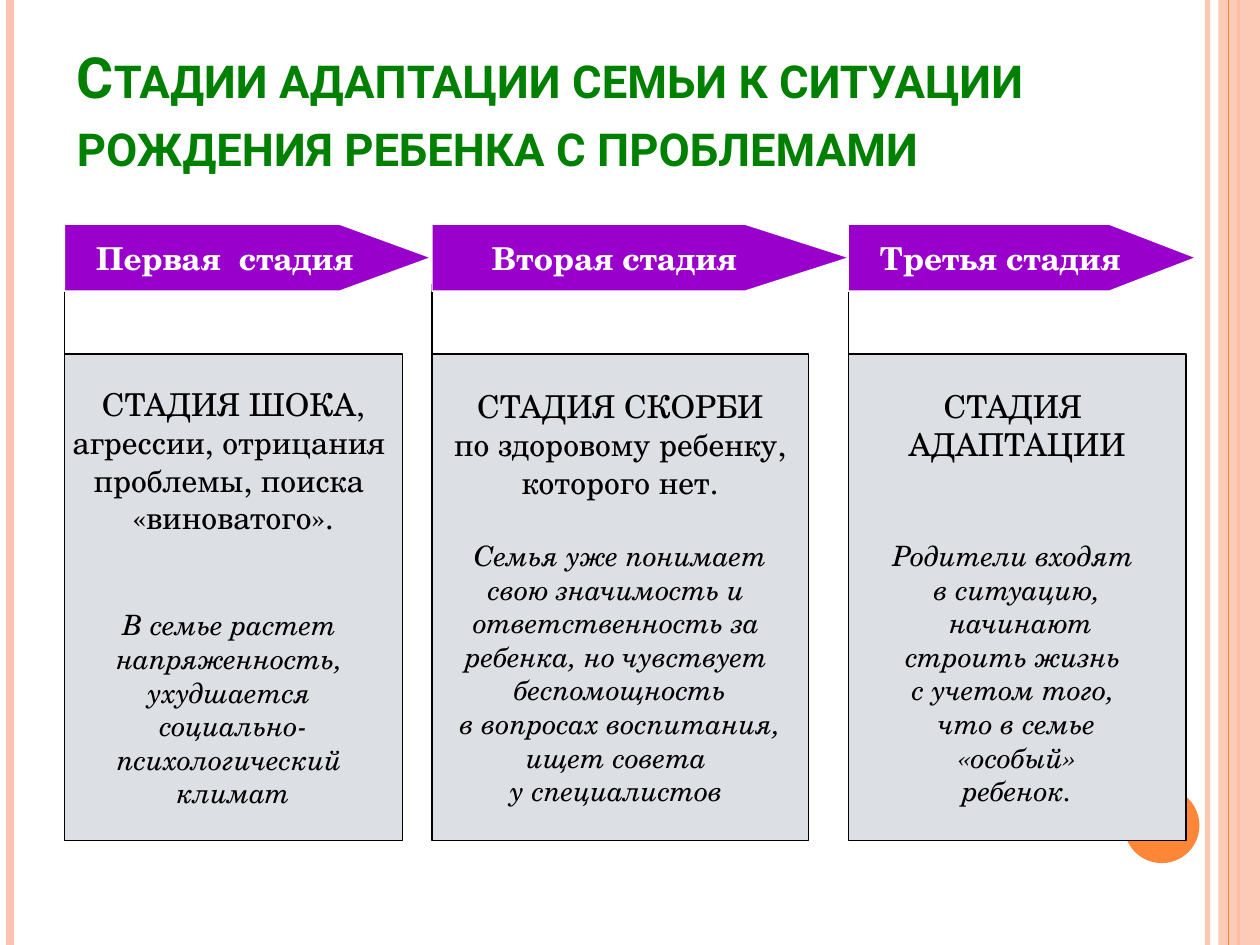
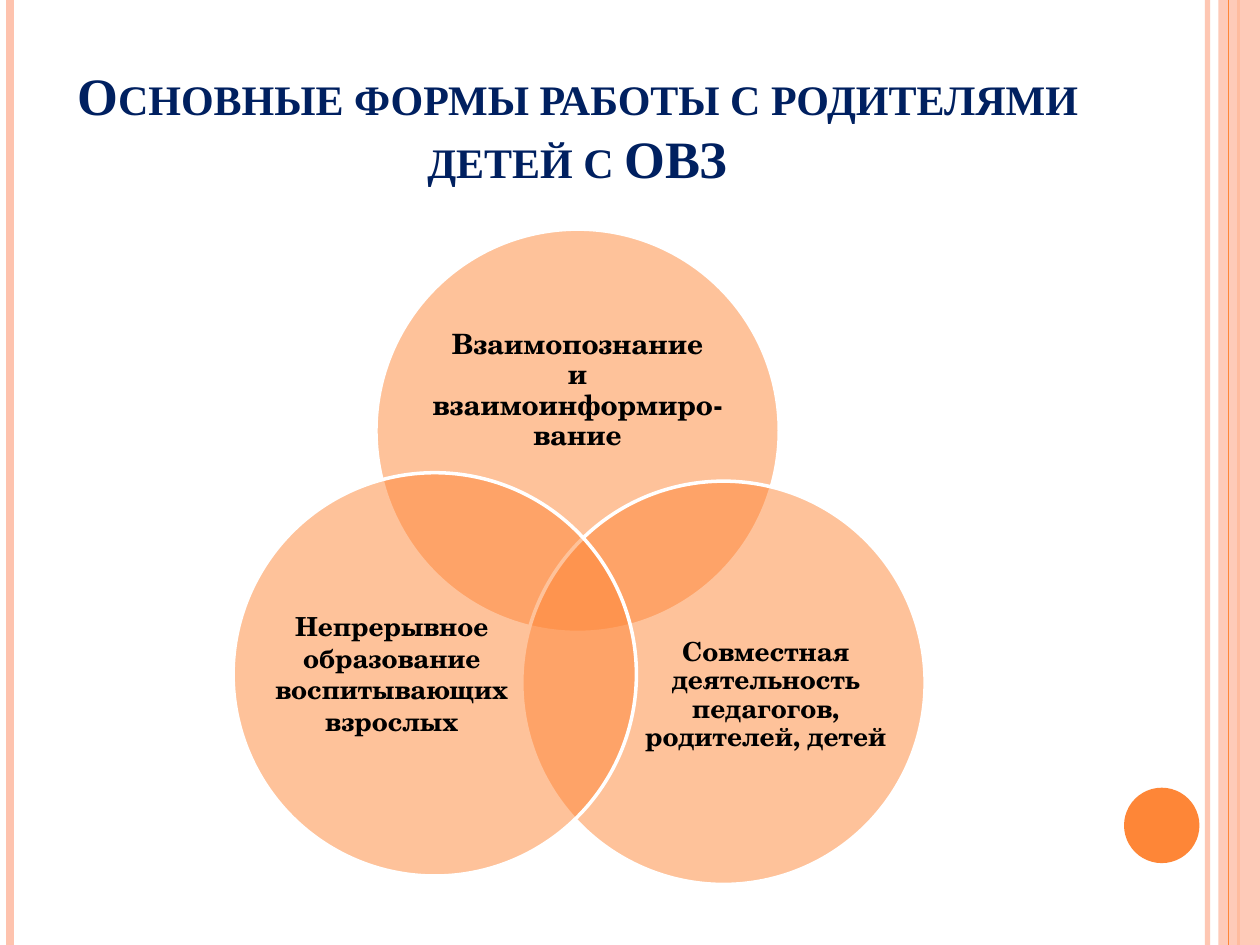
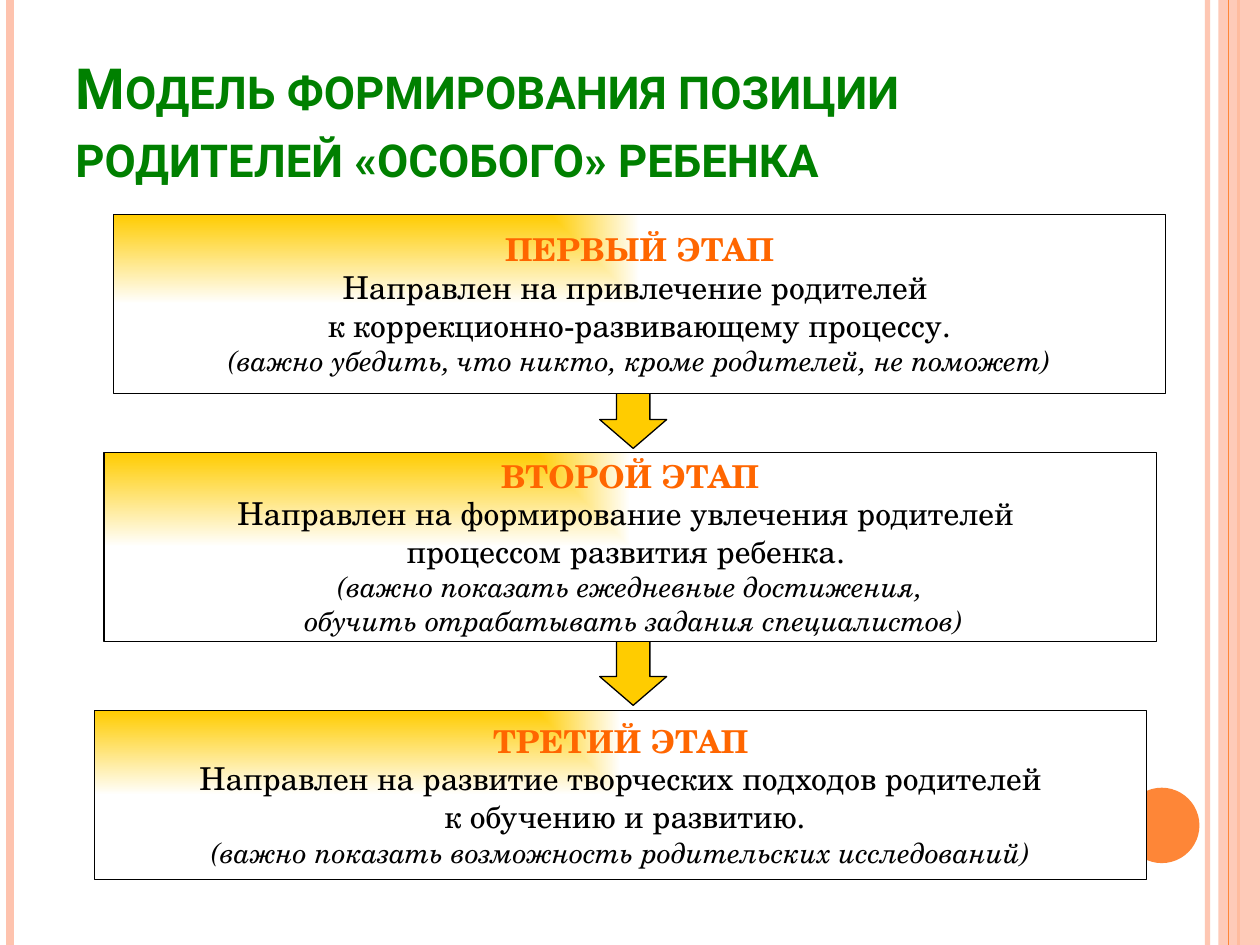
import dataclasses

import pptx
import pptx.dml.color
import pptx.enum.shapes
import pptx.enum.text
import pptx.oxml.ns
import pptx.oxml.xmlchemy
import pptx.util
from lxml import etree

Cm = pptx.util.Cm
Pt = pptx.util.Pt
RGBColor = pptx.dml.color.RGBColor
SHAPE = pptx.enum.shapes.MSO_SHAPE
ALIGN = pptx.enum.text.PP_ALIGN
ANCHOR = pptx.enum.text.MSO_ANCHOR
qn = pptx.oxml.ns.qn

WIDTH, HEIGHT = 25.4, 19.05

BLACK = RGBColor(0x00, 0x00, 0x00)
WHITE = RGBColor(0xFF, 0xFF, 0xFF)
PEACH = RGBColor(0xFE, 0xC3, 0xAE)
ORANGE = RGBColor(0xFE, 0x86, 0x37)
GREEN = RGBColor(0x00, 0x80, 0x00)
NAVY = RGBColor(0x00, 0x20, 0x60)
PURPLE = RGBColor(0x99, 0x00, 0xCC)
GREY = RGBColor(0xDC, 0xDF, 0xE3)
YELLOW = RGBColor(0xFF, 0xCC, 0x00)
HEADING = RGBColor(0xFF, 0x66, 0x00)


@dataclasses.dataclass
class Style:
    size: float
    color: RGBColor = BLACK
    bold: bool = False
    italic: bool = False
    font: str = "TeX Gyre Schola"
    small_caps: bool = False


GREEN_TITLE = Style(32.4, GREEN, bold=True, font="Roboto", small_caps=True)
NAVY_TITLE = Style(30, NAVY, bold=True, font="Times New Roman", small_caps=True)
BODY = Style(18)
NOTE = Style(16, italic=True)
PLATE = Style(18, WHITE, bold=True)
STEP = Style(18, HEADING, bold=True)


def set_opacity(shape, percent):
    """Apply to the first colour of the shape, so call it before a line is added to a fill."""
    color = next(shape._element.spPr.iter(qn("a:srgbClr")))
    etree.SubElement(color, qn("a:alpha")).set("val", str(percent * 1000))


def write(tf, blocks, align=ALIGN.CENTER):
    """Fill the frame with blocks of (lines, style, points of space above)."""
    p = None
    for lines, style, gap in blocks:
        for i, line in enumerate(lines):
            p = tf.add_paragraph() if p is not None else tf.paragraphs[0]
            p.text = line
            p.alignment = align
            if gap and i == 0:
                p.space_before = Pt(gap)
            for r in p.runs:
                r.font.name = style.font
                r.font.size = Pt(style.size)
                r.font.bold = style.bold
                r.font.italic = style.italic
                r.font.color.rgb = style.color
                if style.small_caps:
                    r._r.get_or_add_rPr().set("cap", "small")


def add_shape(s, kind, x, y, w, h, fill, line=None, line_width=0.75, opacity=None):
    sp = s.shapes.add_shape(kind, Cm(x), Cm(y), Cm(w), Cm(h))
    sp.shadow.inherit = False
    sp.fill.solid()
    sp.fill.fore_color.rgb = fill
    if opacity:
        set_opacity(sp, opacity)
    if line is None:
        sp.line.fill.background()
    else:
        sp.line.color.rgb = line
        sp.line.width = Pt(line_width)
    return sp


def add_label(sp, blocks):
    """Put unwrapped, centred text into a shape."""
    sp.text_frame.word_wrap = False
    sp.text_frame.vertical_anchor = ANCHOR.MIDDLE
    write(sp.text_frame, blocks)


def add_vertical_line(s, x, top, bottom, color, width, opacity=None):
    line = s.shapes.add_connector(
        pptx.enum.shapes.MSO_CONNECTOR.STRAIGHT, Cm(x), Cm(top), Cm(x), Cm(bottom))
    line.line.color.rgb = color
    line.line.width = Pt(width)
    if opacity:
        set_opacity(line, opacity)
    etree.SubElement(line._element.spPr, qn("a:effectLst"))


def add_text_box(s, x, y, w, h, anchor):
    tf = s.shapes.add_textbox(Cm(x), Cm(y), Cm(w), Cm(h)).text_frame
    tf.word_wrap = True
    tf.vertical_anchor = anchor
    return tf


def add_title(s, text, style, x=1.27, y=0.76, w=20.75, align=ALIGN.LEFT):
    tf = add_text_box(s, x, y, w, 3.18, ANCHOR.BOTTOM)
    write(tf, [([text], style, 0)], align)


def new_slide(prs):
    """Add a blank slide with the side bands and the corner disc."""
    s = prs.slides.add_slide(prs.slide_layouts[6])
    add_vertical_line(s, 24.34, 0, HEIGHT, PEACH, 3, 93)
    add_vertical_line(s, 0.21, 0, HEIGHT, PEACH, 4.5)
    add_vertical_line(s, 24.97, 0, HEIGHT, ORANGE, 1.5)
    add_shape(s, SHAPE.RECTANGLE, 24.56, 0, 0.84, HEIGHT, PEACH, opacity=87)
    add_vertical_line(s, 24.77, 0, HEIGHT, ORANGE, 0.75)
    add_shape(s, SHAPE.OVAL, 22.66, 15.88, 1.52, 1.52, ORANGE)
    return s


def add_plate(s, x, w, text):
    """Add a pentagon arrow whose tip takes a quarter of its width."""
    h = 1.35
    plate = add_shape(s, SHAPE.PENTAGON, x, 4.52, w, h, PURPLE, WHITE)
    plate.adjustments[0] = w / 4 / h
    add_label(plate, [([text], PLATE, 0)])


def add_circle(s, x, y):
    add_shape(s, SHAPE.OVAL, x, y, 8.13, 8.13, ORANGE, WHITE, 2, opacity=50)


def add_circle_text(s, x, y, w, h, text, size, spacing=0.9, bottom=0.0):
    tf = add_text_box(s, x, y, w, h, ANCHOR.MIDDLE)
    tf.margin_left = tf.margin_right = tf.margin_top = 0
    tf.margin_bottom = Cm(bottom)
    write(tf, [([text], Style(size, bold=True), 0)])
    tf.paragraphs[0].line_spacing = spacing


def set_corner_gradient(sp):
    """Fade from yellow in the top left corner to white."""
    sp.fill.gradient()
    for stop, color in zip(sp.fill.gradient_stops, (YELLOW, WHITE)):
        stop.color.rgb = color
    grad = sp._element.spPr.find(qn("a:gradFill"))
    lin = grad.find(qn("a:lin"))
    path = etree.Element(qn("a:path"))
    path.set("path", "rect")
    focus = etree.SubElement(path, qn("a:fillToRect"))
    focus.set("r", "100000")
    focus.set("b", "100000")
    grad.replace(lin, path)


def add_step(s, x, y, h, heading, body, note):
    box = add_shape(s, SHAPE.RECTANGLE, x, y, 21.21, h, WHITE, BLACK)
    set_corner_gradient(box)
    add_label(box, [([heading], STEP, 0), (body, BODY, 0), (note, NOTE, 0)])


def add_stages_slide(prs):
    s = new_slide(prs)
    add_title(s, "Стадии адаптации семьи к ситуации рождения ребенка с проблемами",
              GREEN_TITLE, x=1.3, y=0.53, w=22.86)
    # left, box width, plate width, line top, line bottom, plate text, gap, stage, family
    stages = [
        (1.3, 6.81, 7.39, 5.54, 7.52, "Первая  стадия", 40.9,
         ["СТАДИЯ ШОКА,", "агрессии, отрицания ", "проблемы, поиска ", "«виноватого»."],
         ["В семье растет ", "напряженность, ", "ухудшается ", "социально-",
          "психологический ", "климат"]),
        (8.71, 7.59, 8.41, 5.72, 7.14, "Вторая стадия", 21.7,
         ["СТАДИЯ СКОРБИ", "по здоровому ребенку,", "которого нет."],
         ["Семья уже понимает", "свою значимость и ", "ответственность за ",
          "ребенка, но чувствует ", "беспомощность", "в вопросах воспитания,",
          "ищет совета ", "у специалистов "]),
        (17.1, 6.81, 7.01, 5.33, 7.14, "Третья стадия", 43.4,
         ["СТАДИЯ ", "АДАПТАЦИИ"],
         ["Родители входят ", "в ситуацию,", " начинают", "строить жизнь ",
          "с учетом того, ", "что в семье", "«особый»", "ребенок."]),
    ]
    for x, box_w, plate_w, top, bottom, label, gap, stage, family in stages:
        box = add_shape(s, SHAPE.RECTANGLE, x, 7.14, box_w, 9.8, GREY, BLACK)
        add_label(box, [(stage, BODY, 0), (family, NOTE, gap)])
        add_vertical_line(s, x, top, bottom, BLACK, 0.75)
        add_plate(s, x, plate_w, label)


def add_forms_slide(prs):
    s = new_slide(prs)
    add_title(s, "Основные формы работы с родителями детей с ОВЗ", NAVY_TITLE,
              align=ALIGN.CENTER)
    add_circle(s, 7.58, 4.62)
    add_circle_text(s, 8.66, 6.05, 5.97, 3.66,
                    "Взаимопознание\vи взаимоинформиро-вание", 16)
    add_circle(s, 10.52, 9.7)
    add_circle_text(s, 13, 11.79, 4.88, 4.47,
                    "Совместная деятельность\vпедагогов, родителей, детей", 15)
    add_circle(s, 4.7, 9.53)
    add_circle_text(s, 5.46, 11.63, 4.88, 4.47,
                    "Непрерывное образование\vвоспитывающих взрослых", 15,
                    spacing=1.0, bottom=0.57)


def add_model_slide(prs):
    s = new_slide(prs)
    for y in (11.91, 6.73):
        arrow = add_shape(s, SHAPE.DOWN_ARROW, 12.09, y, 1.35, 2.31, YELLOW, BLACK)
        arrow.adjustments[1] = 0.43
    add_title(s, "Модель формирования позиции родителей «особого» ребенка", GREEN_TITLE)
    add_step(s, 2.29, 4.32, 3.61, "ПЕРВЫЙ ЭТАП",
             ["Направлен на привлечение родителей ", "к коррекционно-развивающему процессу."],
             ["(важно убедить, что никто, кроме родителей, не поможет)"])
    add_step(s, 2.1, 9.12, 3.81, "ВТОРОЙ ЭТАП",
             ["Направлен на формирование увлечения родителей ", "процессом развития ребенка. "],
             ["(важно показать ежедневные достижения,",
              " обучить отрабатывать задания специалистов)"])
    add_step(s, 1.91, 14.33, 3.4, "ТРЕТИЙ ЭТАП",
             ["Направлен на развитие творческих подходов родителей", " к обучению и развитию."],
             ["(важно показать возможность родительских исследований)"])


def main():
    prs = pptx.Presentation()
    prs.slide_width = Cm(WIDTH)
    prs.slide_height = Cm(HEIGHT)
    add_stages_slide(prs)
    add_forms_slide(prs)
    add_model_slide(prs)
    prs.save("out.pptx")


if __name__ == "__main__":
    main()
